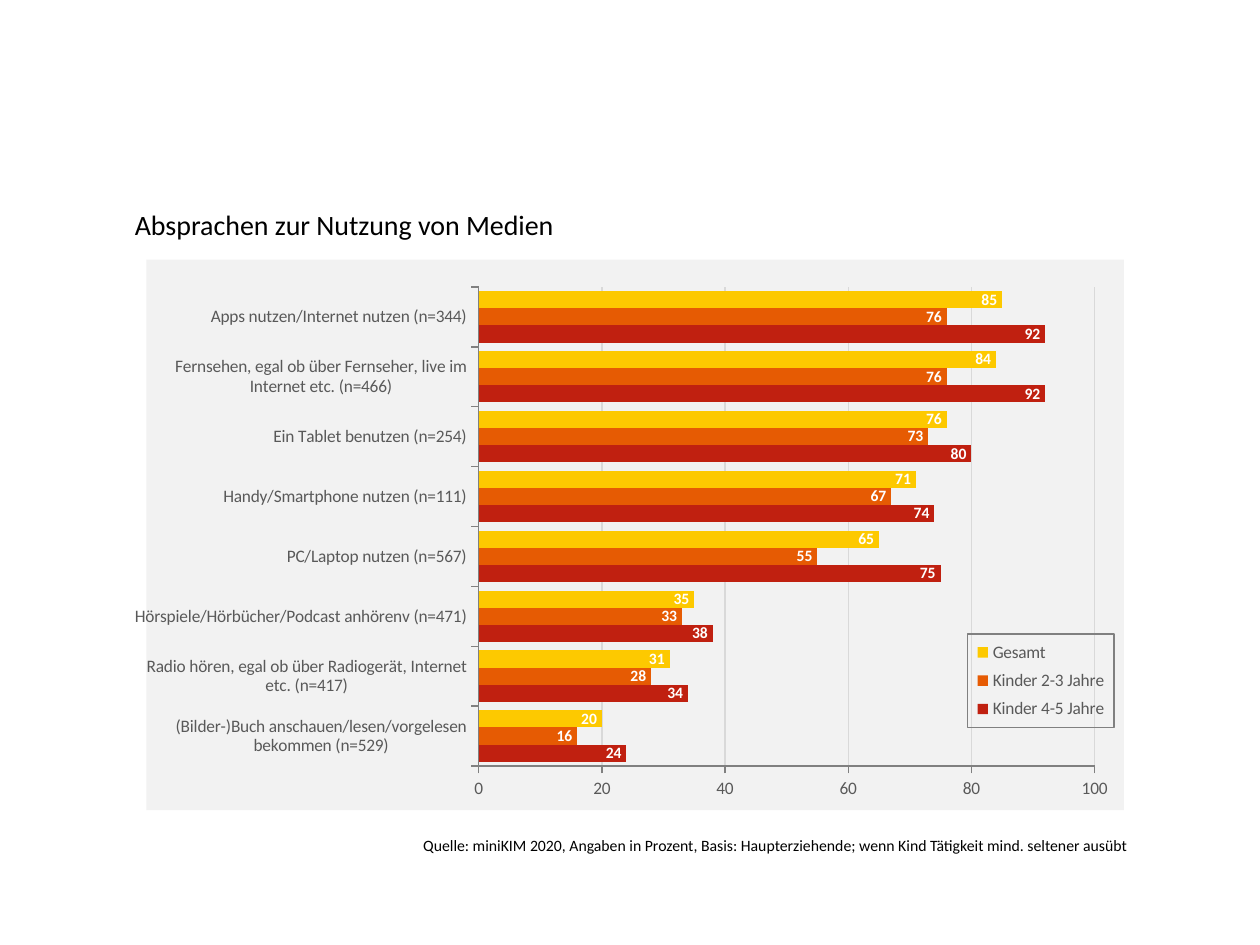
"""Build the slide on family agreements about media use, with a clustered bar chart."""
from lxml.etree import SubElement
from pptx import Presentation
from pptx.chart.data import CategoryChartData
from pptx.dml.color import RGBColor
from pptx.enum.chart import XL_CHART_TYPE, XL_LABEL_POSITION, XL_LEGEND_POSITION, XL_TICK_MARK
from pptx.enum.text import MSO_ANCHOR, PP_ALIGN
from pptx.oxml import parse_xml
from pptx.oxml.ns import nsdecls, qn
from pptx.util import Inches, Pt

BLACK = RGBColor(0x00, 0x00, 0x00)
WHITE = RGBColor(0xFF, 0xFF, 0xFF)
LABEL_GREY = RGBColor(0x59, 0x59, 0x59)
AXIS_GREY = RGBColor(0x80, 0x80, 0x80)
GRID_GREY = RGBColor(0xD9, 0xD9, 0xD9)
PANEL_GREY = RGBColor(0xF2, 0xF2, 0xF2)
RED = RGBColor(0xC0, 0x20, 0x10)
ORANGE = RGBColor(0xE6, 0x5B, 0x03)
YELLOW = RGBColor(0xFD, 0xC9, 0x00)
FONT = "Calibri"

HEADING = "Absprachen zur Nutzung von Medien"
SOURCE = (
    "Quelle: miniKIM 2020, Angaben in Prozent, Basis: Haupterziehende; "
    "wenn Kind Tätigkeit mind. seltener ausübt"
)
ACTIVITIES = [
    "(Bilder-)Buch anschauen/lesen/vorgelesen bekommen (n=529)",
    "Radio hören, egal ob über Radiogerät, Internet etc. (n=417)",
    "Hörspiele/Hörbücher/Podcast anhörenv (n=471)",
    "PC/Laptop nutzen (n=567)",
    "Handy/Smartphone nutzen (n=111)",
    "Ein Tablet benutzen (n=254)",
    "Fernsehen, egal ob über Fernseher, live im Internet etc. (n=466)",
    "Apps nutzen/Internet nutzen (n=344)",
]
AGE_GROUPS = [
    ("Kinder 4-5 Jahre", RED, (24, 34, 38, 75, 74, 80, 92, 92)),
    ("Kinder 2-3 Jahre", ORANGE, (16, 28, 33, 55, 67, 73, 76, 76)),
    ("Gesamt", YELLOW, (20, 31, 35, 65, 71, 76, 84, 85)),
]
PLOT_AREA = (0.34, 0.05, 0.63, 0.87)
LEGEND_AREA = (0.84, 0.68, 0.15, 0.17)


def style_font(font, size, color, bold=False):
    font.name = FONT
    font.size = Pt(size)
    font.color.rgb = color
    font.bold = bold


def fill_text(shape, text, size, anchor, alignment):
    frame = shape.text_frame
    frame.text = text
    frame.word_wrap = True
    frame.vertical_anchor = anchor
    paragraph = frame.paragraphs[0]
    paragraph.alignment = alignment
    style_font(paragraph.runs[0].font, size, BLACK)
    return paragraph


def manual_layout(area, inner=False):
    layout = parse_xml(f"<c:layout {nsdecls('c')}><c:manualLayout/></c:layout>")
    settings = [("layoutTarget", "inner")] if inner else []
    settings += [("xMode", "edge"), ("yMode", "edge"), *zip("xywh", area)]
    for tag, value in settings:
        SubElement(layout[0], qn(f"c:{tag}")).set("val", str(value))
    return layout


def solid_fill(color):
    return f'<a:solidFill><a:srgbClr val="{color}"/></a:solidFill>'


def shape_properties(content):
    return parse_xml(f"<c:spPr {nsdecls('c', 'a')}>{content}</c:spPr>")


def style_axis(axis):
    axis.major_tick_mark = XL_TICK_MARK.OUTSIDE
    axis.minor_tick_mark = XL_TICK_MARK.NONE
    style_font(axis.tick_labels.font, 10, LABEL_GREY)
    axis.format.line.color.rgb = AXIS_GREY
    axis.format.line.width = Pt(0.75)


def add_agreements_chart(slide):
    agreements = CategoryChartData(number_format="#,##0")
    agreements.categories = ACTIVITIES
    for name, _, shares in AGE_GROUPS:
        agreements.add_series(name, shares)
    chart = slide.shapes.add_chart(
        XL_CHART_TYPE.BAR_CLUSTERED,
        Inches(1.07), Inches(2.06), Inches(7.85), Inches(4.37), agreements,
    ).chart
    chart.has_title = False
    style_font(chart.font, 10, BLACK)
    chart_space = chart.element
    chart_space.find(qn("c:chart")).addnext(
        shape_properties(solid_fill(PANEL_GREY) + "<a:ln><a:noFill/></a:ln>")
    )

    style_axis(chart.category_axis)
    shares_axis = chart.value_axis
    style_axis(shares_axis)
    shares_axis.minimum_scale, shares_axis.maximum_scale = 0, 100
    shares_axis.major_unit = 20
    shares_axis.tick_labels.number_format = "#,##0"
    shares_axis.tick_labels.number_format_is_linked = False
    shares_axis.major_gridlines.format.line.color.rgb = GRID_GREY
    shares_axis.major_gridlines.format.line.width = Pt(0.75)

    plot = chart.plots[0]
    plot.gap_width = 50
    plot.overlap = 0
    plot.vary_by_categories = False
    for bars, (_, color, _) in zip(plot.series, AGE_GROUPS):
        bars.format.fill.solid()
        bars.format.fill.fore_color.rgb = color
        labels = bars.data_labels
        labels.show_value = True
        labels.position = XL_LABEL_POSITION.INSIDE_END
        labels.number_format = "#,##0"
        labels.number_format_is_linked = False
        style_font(labels.font, 9, WHITE, bold=True)

    plot_area = chart_space.find(f".//{qn('c:plotArea')}")
    for automatic in plot_area.findall(qn("c:layout")):
        plot_area.remove(automatic)
    plot_area.insert(0, manual_layout(PLOT_AREA, inner=True))
    add_legend(chart)


def add_legend(chart):
    chart.has_legend = True
    legend = chart.legend
    legend.position = XL_LEGEND_POSITION.RIGHT
    legend.include_in_layout = False
    style_font(legend.font, 10, LABEL_GREY)
    element = chart.element.find(f".//{qn('c:legend')}")
    for automatic in element.findall(qn("c:layout")):
        element.remove(automatic)
    element.find(qn("c:legendPos")).addnext(manual_layout(LEGEND_AREA))
    border = f'<a:ln w="9525">{solid_fill(AXIS_GREY)}</a:ln>'
    element.find(qn("c:overlay")).addnext(shape_properties("<a:noFill/>" + border))


def main():
    presentation = Presentation()
    presentation.slide_width, presentation.slide_height = Inches(10), Inches(7.5)
    slide = presentation.slides.add_slide(presentation.slide_layouts[5])

    heading = slide.shapes.title
    heading.left, heading.top = Inches(0.97), Inches(1.63)
    heading.width, heading.height = Inches(7.67), Inches(0.47)
    fill_text(heading, HEADING, 16, MSO_ANCHOR.TOP, PP_ALIGN.LEFT).line_spacing = 0.9

    source = slide.shapes.add_textbox(Inches(1.73), Inches(6.52), Inches(7.31), Inches(0.37))
    fill_text(source, SOURCE, 9, MSO_ANCHOR.MIDDLE, PP_ALIGN.RIGHT)

    add_agreements_chart(slide)
    presentation.save("out.pptx")


if __name__ == "__main__":
    main()
